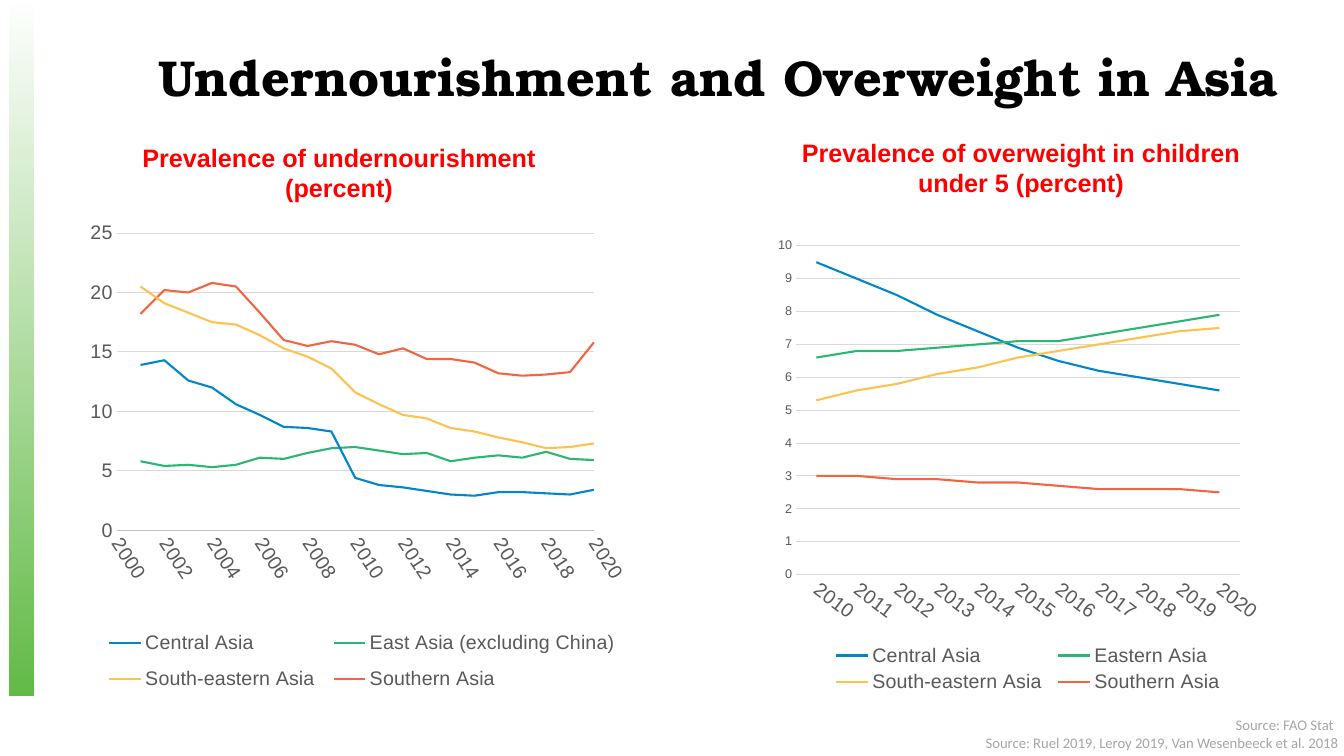
from dataclasses import dataclass

from lxml.etree import SubElement
from pptx import Presentation
from pptx.chart.data import CategoryChartData, XyChartData
from pptx.dml.color import RGBColor as Rgb
from pptx.enum.chart import XL_CHART_TYPE as ChartType
from pptx.enum.chart import XL_LEGEND_POSITION as LegendPosition
from pptx.enum.chart import XL_TICK_MARK as TickMark
from pptx.enum.shapes import MSO_SHAPE as Shape
from pptx.enum.text import MSO_ANCHOR as Anchor
from pptx.enum.text import PP_ALIGN as Align
from pptx.oxml import parse_xml
from pptx.oxml.ns import nsdecls, qn
from pptx.util import Cm, Pt


@dataclass(frozen=True)
class Theme:
    band: str = "62BB46"
    title: str = "000000"
    heading: str = "FF0000"
    source: str = "A6A6A6"
    label: str = "595959"
    grid: str = "D9D9D9"
    axis: str = "BFBFBF"
    regions: tuple = ("0086CB", "2BB673", "FEC34E", "F26541")
    title_font: str = "TeX Gyre Bonum"
    body_font: str = "Arial"
    source_font: str = "Calibri"
    title_size: float = 36
    heading_size: float = 18
    label_size: float = 14
    small_size: float = 9
    source_size: float = 10.5


def apply(target, values):
    for name, value in values.items():
        setattr(target, name, value)


def set_font(font, name, size, color, bold=False):
    apply(font, {"name": name, "size": Pt(size), "bold": bold})
    font.color.rgb = Rgb.from_string(color)


def set_line(line, color, width):
    line.color.rgb = Rgb.from_string(color)
    line.width = Pt(width)


def manual_layout(bounds, inner=False):
    target = '<c:layoutTarget val="inner"/>' if inner else ""
    modes = "".join(f'<c:{side}Mode val="edge"/>' for side in "xy")
    sizes = "".join(f'<c:{side} val="{value}"/>' for side, value in zip("xywh", bounds))
    return parse_xml(
        f'<c:layout {nsdecls("c")}><c:manualLayout>{target}{modes}{sizes}'
        "</c:manualLayout></c:layout>"
    )


class SlideBuilder:
    def __init__(self, slide, theme):
        self.shapes = slide.shapes
        self.theme = theme

    def fading_band(self, *box):
        band = self.shapes.add_shape(Shape.RECTANGLE, *map(Cm, box))
        band.shadow.inherit = False
        band.line.fill.background()
        band.fill.gradient()
        band.fill.gradient_angle = 270
        for stop in band.fill.gradient_stops:
            stop.color.rgb = Rgb.from_string(self.theme.band)
        top_color = next(band._element.iter(qn("a:srgbClr")))
        SubElement(top_color, qn("a:alpha"), val="0")

    def text(self, words, box, font, frame_format=None, **paragraph_format):
        frame = self.shapes.add_textbox(*map(Cm, box)).text_frame
        apply(frame, {"word_wrap": True, **(frame_format or {})})
        paragraph = frame.paragraphs[0]
        apply(paragraph, paragraph_format)
        run = paragraph.add_run()
        run.text = words
        set_font(run.font, *font)

    def title(self, words, *box):
        margins = {f"margin_{side}": 0 for side in ("left", "top", "right", "bottom")}
        font = (self.theme.title_font, self.theme.title_size, self.theme.title, True)
        self.text(words, box, font, {"vertical_anchor": Anchor.MIDDLE, **margins},
                  alignment=Align.CENTER, line_spacing=0.9)

    def heading(self, words, *box):
        font = (self.theme.body_font, self.theme.heading_size, self.theme.heading, True)
        self.text(words, box, font, alignment=Align.CENTER, space_after=Pt(6))

    def source(self, words, *box):
        font = (self.theme.source_font, self.theme.source_size, self.theme.source)
        self.text(words, box, font, alignment=Align.RIGHT)

    def chart(self, kind, data, box, plot_bounds, legend_bounds,
              year_format, year_line, year_angle, value_format, value_size):
        theme = self.theme
        chart = self.shapes.add_chart(kind, *map(Cm, box), data).chart
        apply(chart, {"has_title": False, "has_legend": True})
        set_font(chart.font, theme.body_font, 10, theme.title)

        legend = chart.legend
        apply(legend, {"position": LegendPosition.BOTTOM, "include_in_layout": False})
        set_font(legend.font, theme.body_font, theme.label_size, theme.label)

        years, values = chart.category_axis, chart.value_axis
        no_ticks = {"major_tick_mark": TickMark.NONE, "minor_tick_mark": TickMark.NONE}
        apply(years, {**no_ticks, "has_major_gridlines": False, **year_format})
        apply(values, {**no_ticks, "has_major_gridlines": True, **value_format})
        set_font(years.tick_labels.font, theme.body_font, theme.label_size, theme.label)
        set_font(values.tick_labels.font, theme.body_font, value_size, theme.label)
        next(years._element.iter(qn("a:bodyPr"))).set("rot", str(year_angle * 60000))
        set_line(years.format.line, year_line, 0.75)
        values.format.line.fill.background()
        set_line(values.major_gridlines.format.line, theme.grid, 0.75)

        plot = chart.plots[0]
        plot.vary_by_categories = False
        for region, color in zip(plot.series, theme.regions):
            region.smooth = False
            set_line(region.format.line, color, 1.5)

        plot_area = next(chart._chartSpace.iter(qn("c:plotArea")))
        for parent in (plot_area, legend._element):
            for automatic in parent.findall(qn("c:layout")):
                parent.remove(automatic)
        plot_area.insert(0, manual_layout(plot_bounds, inner=True))
        legend._element.find(qn("c:legendPos")).addnext(manual_layout(legend_bounds))


UNDERNOURISHMENT = {
    "Central Asia": (13.9, 14.3, 12.6, 12, 10.6, 9.7, 8.7, 8.6, 8.3, 4.4,
                     3.8, 3.6, 3.3, 3, 2.9, 3.2, 3.2, 3.1, 3, 3.4),
    "East Asia (excluding China)": (5.8, 5.4, 5.5, 5.3, 5.5, 6.1, 6, 6.5, 6.9, 7,
                                    6.7, 6.4, 6.5, 5.8, 6.1, 6.3, 6.1, 6.6, 6, 5.9),
    "South-eastern Asia": (20.5, 19.1, 18.3, 17.5, 17.3, 16.4, 15.3, 14.6, 13.6, 11.6,
                           10.6, 9.7, 9.4, 8.6, 8.3, 7.8, 7.4, 6.9, 7, 7.3),
    "Southern Asia": (18.2, 20.2, 20, 20.8, 20.5, 18.3, 16, 15.5, 15.9, 15.6,
                      14.8, 15.3, 14.4, 14.4, 14.1, 13.2, 13, 13.1, 13.3, 15.8),
}
OVERWEIGHT = {
    "Central Asia": (9.5, 9, 8.5, 7.9, 7.4, 6.9, 6.5, 6.2, 6, 5.8, 5.6),
    "Eastern Asia": (6.6, 6.8, 6.8, 6.9, 7, 7.1, 7.1, 7.3, 7.5, 7.7, 7.9),
    "South-eastern Asia": (5.3, 5.6, 5.8, 6.1, 6.3, 6.6, 6.8, 7, 7.2, 7.4, 7.5),
    "Southern Asia": (3, 3, 2.9, 2.9, 2.8, 2.8, 2.7, 2.6, 2.6, 2.6, 2.5),
}


def main():
    deck = Presentation()
    apply(deck, {"slide_width": Cm(33.87), "slide_height": Cm(19.05)})
    theme = Theme()
    page = SlideBuilder(deck.slides.add_slide(deck.slide_layouts[6]), theme)

    page.fading_band(0.23, 0, 0.61, 17.53)
    page.title("Undernourishment and Overweight in Asia", 1.88, 0.69, 32.44, 2.64)
    page.source("Source: Ruel 2019, Leroy 2019, Van Wesenbeeck et al. 2018",
                23.01, 18.36, 10.97, 0.69)

    undernourishment = XyChartData()
    for region, shares in UNDERNOURISHMENT.items():
        series = undernourishment.add_series(region)
        for year, share in enumerate(shares, 2001):
            series.add_data_point(year, share)
    page.chart(ChartType.XY_SCATTER_LINES_NO_MARKERS, undernourishment,
               (1.73, 5.33, 14.22, 12.65), (0.085, 0.043, 0.846, 0.592),
               (0.05, 0.81, 0.94, 0.17),
               {"minimum_scale": 2000, "maximum_scale": 2020, "major_unit": 1},
               theme.axis, 57, {"minimum_scale": 0, "maximum_scale": 25, "major_unit": 5},
               theme.label_size)

    page.heading("Prevalence of overweight in children under 5 (percent)",
                 19.43, 3.33, 12.6, 0.71)
    page.heading("Prevalence of undernourishment (percent)", 2.92, 3.45, 11.25, 1.78)
    page.source("Source: FAO Stat", 17.88, 17.91, 15.98, 0.81)

    overweight = CategoryChartData()
    overweight.categories = [str(year) for year in range(2010, 2021)]
    for region, shares in OVERWEIGHT.items():
        overweight.add_series(region, shares)
    page.chart(ChartType.LINE, overweight,
               (19.43, 5.72, 12.7, 11.84), (0.05, 0.04, 0.88, 0.7),
               (0.11, 0.88, 0.8, 0.12), {}, theme.grid, 37,
               {"minimum_scale": 0, "maximum_scale": 10, "major_unit": 1},
               theme.small_size)

    deck.save("out.pptx")


if __name__ == "__main__":
    main()
